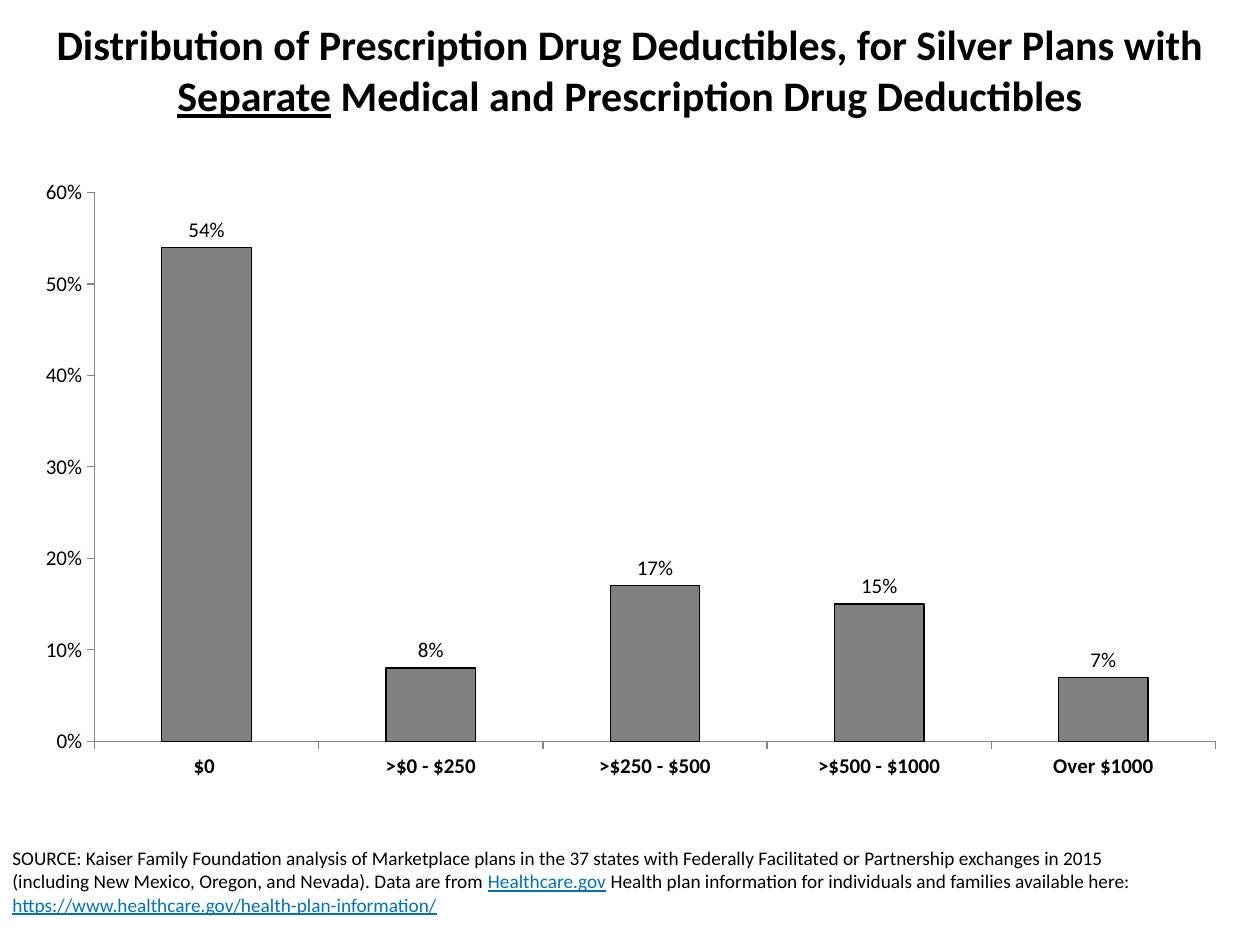
from lxml.etree import SubElement
from pptx import Presentation
from pptx.chart.data import CategoryChartData
from pptx.dml.color import RGBColor
from pptx.enum.chart import XL_CHART_TYPE, XL_LABEL_POSITION, XL_TICK_MARK
from pptx.enum.text import MSO_ANCHOR, MSO_AUTO_SIZE, PP_ALIGN
from pptx.oxml.ns import qn
from pptx.util import Inches, Pt

FONT = "Calibri"
BLACK = "000000"
LINK_BLUE = "0072C0"
BAR_GRAY = "808080"
AXIS_GRAY = "868686"

TITLE = [
    ("Distribution of Prescription Drug Deductibles, for Silver Plans with ", False),
    ("Separate", True),
    (" Medical and Prescription Drug Deductibles", False),
]
SOURCE = [
    ("SOURCE: Kaiser Family Foundation analysis of Marketplace plans in the 37 states with "
     "Federally Facilitated or Partnership exchanges in 2015 (including New Mexico, Oregon, "
     "and Nevada). Data are from ", False),
    ("Healthcare.gov", True),
    (" Health plan information for individuals and families available here: ", False),
    ("https://www.healthcare.gov/health-plan-information/", True),
]
SHARES = {
    "$0 ": 0.54,
    ">$0 - $250": 0.08,
    ">$250 - $500": 0.17,
    ">$500 - $1000": 0.15,
    "Over $1000": 0.07,
}
PLOT_LAYOUT = {"x": 0.06, "y": 0.04, "w": 0.92, "h": 0.88}


def color(value):
    return RGBColor.from_string(value)


def style_font(font, size, bold=False, fill=BLACK):
    font.name = FONT
    font.size = Pt(size)
    font.bold = bold
    font.color.rgb = color(fill)


def write_spans(para, spans, size, bold=False, underlined_fill=BLACK):
    for text, underlined in spans:
        span = para.add_run()
        span.text = text
        style_font(span.font, size, bold, underlined_fill if underlined else BLACK)
        span.font.underline = underlined


def add_title(page):
    title = page.shapes.title
    title.left, title.top = Inches(0.1), Inches(0.1)
    title.width, title.height = Inches(9.8), Inches(1)
    frame = title.text_frame
    frame.word_wrap = True
    frame.auto_size = MSO_AUTO_SIZE.NONE
    frame.vertical_anchor = MSO_ANCHOR.TOP
    para = frame.paragraphs[0]
    para.alignment = PP_ALIGN.CENTER
    write_spans(para, TITLE, 24, bold=True)


def add_source(page):
    box = page.shapes.add_textbox(Inches(0), Inches(6.67), Inches(9.25), Inches(0.84))
    box.text_frame.word_wrap = True
    write_spans(box.text_frame.paragraphs[0], SOURCE, 11, underlined_fill=LINK_BLUE)


def style_axis(axis, bold=False):
    axis.has_major_gridlines = False
    axis.major_tick_mark = XL_TICK_MARK.OUTSIDE
    axis.minor_tick_mark = XL_TICK_MARK.NONE
    axis.format.line.color.rgb = color(AXIS_GRAY)
    axis.format.line.width = Pt(0.75)
    style_font(axis.tick_labels.font, 12, bold)


def place_plot(chart):
    plot_area = chart.plots[0]._element.getparent()
    layout = plot_area.find(qn("c:layout"))
    if layout is None:
        layout = SubElement(plot_area, qn("c:layout"))
        plot_area.insert(0, layout)
    manual = SubElement(layout, qn("c:manualLayout"))
    settings = {"layoutTarget": "inner", "xMode": "edge", "yMode": "edge", **PLOT_LAYOUT}
    for name, value in settings.items():
        SubElement(manual, qn(f"c:{name}")).set("val", str(value))


def add_deductible_chart(page):
    data = CategoryChartData(number_format="0%")
    data.categories = list(SHARES)
    data.add_series("Series 1", list(SHARES.values()))
    chart = page.shapes.add_chart(
        XL_CHART_TYPE.COLUMN_CLUSTERED,
        Inches(0.17), Inches(1.33), Inches(9.67), Inches(4.95), data,
    ).chart
    style_font(chart.font, 18)
    chart.has_title = False
    chart.has_legend = False
    place_plot(chart)

    style_axis(chart.category_axis, bold=True)
    style_axis(chart.value_axis)
    chart.value_axis.minimum_scale = 0
    chart.value_axis.maximum_scale = 0.6
    chart.value_axis.major_unit = 0.1
    chart.value_axis.tick_labels.number_format = "0%"
    chart.value_axis.tick_labels.number_format_is_linked = False

    plot = chart.plots[0]
    plot.gap_width = 150
    plot.vary_by_categories = False
    series = plot.series[0]
    series.format.fill.solid()
    series.format.fill.fore_color.rgb = color(BAR_GRAY)
    series.format.line.color.rgb = color(BLACK)
    series.format.line.width = Pt(0.75)

    labels = series.data_labels
    labels.show_value = True
    labels.number_format = "0%"
    labels.number_format_is_linked = False
    labels.position = XL_LABEL_POSITION.OUTSIDE_END
    style_font(labels.font, 12)


def main():
    deck = Presentation()
    deck.slide_width, deck.slide_height = Inches(10), Inches(7.5)
    page = deck.slides.add_slide(deck.slide_layouts[5])
    add_source(page)
    add_title(page)
    add_deductible_chart(page)
    deck.save("out.pptx")


if __name__ == "__main__":
    main()
